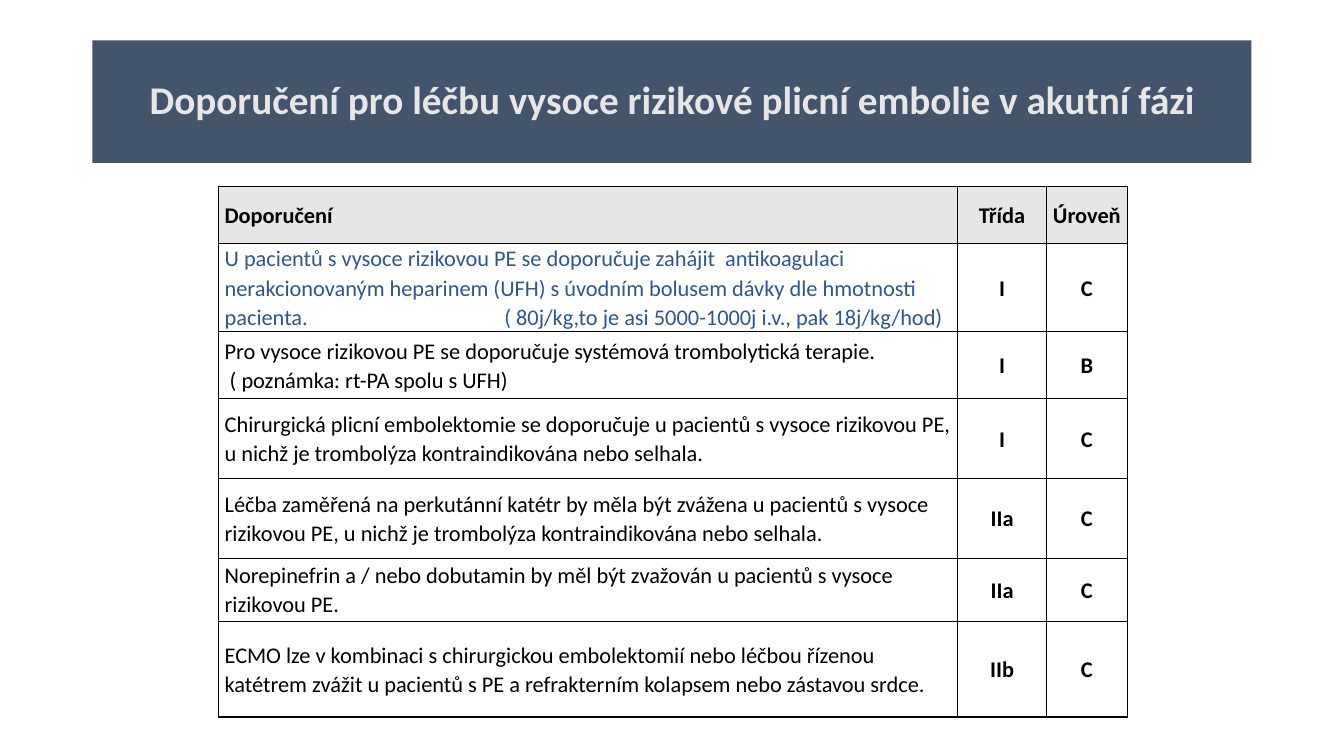
from typing import NamedTuple

from lxml.etree import SubElement
from pptx import Presentation
from pptx.dml.color import RGBColor
from pptx.enum.shapes import MSO_SHAPE as Shape
from pptx.enum.text import MSO_ANCHOR as Anchor, PP_ALIGN as Align
from pptx.oxml import parse_xml
from pptx.oxml.ns import nsdecls, qn
from pptx.util import Inches, Pt

# The slide is a grid of 160 columns by 90 rows, 12 to the inch.
UNIT = Inches(1) // 12
FONT = "Calibri"
BLACK, BLUE, SLATE, PALE = "000000", "2F5597", "44546A", "E7E6E6"
COLS = (88, 10.6, 9.6)
PAD = 0.75


class Advice(NamedTuple):
    text: str
    grade: str
    level: str
    height: float
    color: str = BLACK
    tab: float = 0


HEAD = Advice("Doporučení", "Třída", "Úroveň", 6.8)
ITEMS = (
    Advice("U pacientů s vysoce rizikovou PE se doporučuje zahájit  antikoagulaci  "
           "nerakcionovaným heparinem (UFH) s úvodním bolusem dávky dle hmotnosti "
           "pacienta.\t( 80j/kg,to je asi 5000-1000j i.v., pak 18j/kg/hod)",
           "I", "C", 9.5, BLUE, 33.3),
    Advice("Pro vysoce rizikovou PE se doporučuje systémová trombolytická terapie.\n"
           " ( poznámka: rt-PA spolu s UFH)", "I", "B", 8),
    Advice("Chirurgická plicní embolektomie se doporučuje u pacientů s vysoce "
           "rizikovou PE, u nichž je trombolýza kontraindikována nebo selhala.",
           "I", "C", 9.5),
    Advice("Léčba zaměřená na perkutánní katétr by měla být zvážena u pacientů s "
           "vysoce rizikovou PE, u nichž je trombolýza kontraindikována nebo selhala.",
           "IIa", "C", 9.5),
    Advice("Norepinefrin a / nebo dobutamin by měl být zvažován u pacientů s vysoce "
           "rizikovou PE.", "IIa", "C", 7.5),
    Advice("ECMO lze v kombinaci s chirurgickou embolektomií nebo léčbou řízenou "
           "katétrem zvážit u pacientů s PE a refrakterním kolapsem nebo zástavou "
           "srdce.", "IIb", "C", 11.4),
)


def grid(count: float) -> int:
    """Turn grid steps into a length."""
    return round(count * UNIT)


def paint(hue: str) -> RGBColor:
    return RGBColor.from_string(hue)


def write(frame, text: str, *, size: float = 16, color: str = BLACK,
          bold: bool = False, align=Align.LEFT, space: float = 1.07,
          tab: float = 0) -> None:
    """Fill a text frame, one paragraph to each line of text."""
    for i, line in enumerate(text.split("\n")):
        para = frame.add_paragraph() if i else frame.paragraphs[0]
        para.alignment, para.line_spacing = align, space
        run = para.add_run()
        run.text = line
        font = run.font
        font.name, font.size, font.bold = FONT, Pt(size), bold
        font.color.rgb = paint(color)
        if tab:
            stops = SubElement(para._p.get_or_add_pPr(), qn("a:tabLst"))
            SubElement(stops, qn("a:tab"), pos=str(grid(tab)), algn="l")


def edge(cell, color: str = BLACK, width: float = 1) -> None:
    """Draw a line on all four sides of a cell."""
    props = cell._tc.get_or_add_tcPr()
    for i, side in enumerate("LRTB"):
        props.insert(i, parse_xml(
            f'<a:ln{side} {nsdecls("a")} w="{Pt(width)}"><a:solidFill>'
            f'<a:srgbClr val="{color}"/></a:solidFill></a:ln{side}>'))


def add_title(slide, text: str) -> None:
    bar = slide.shapes.add_shape(
        Shape.RECTANGLE, grid(11), grid(4.8), grid(138), grid(14.6))
    bar.shadow.inherit = False
    bar.fill.solid()
    bar.fill.fore_color.rgb = paint(SLATE)
    bar.line.fill.background()
    bar.text_frame.word_wrap = True
    bar.text_frame.vertical_anchor = Anchor.MIDDLE
    write(bar.text_frame, text, size=28, color=PALE, bold=True,
          align=Align.CENTER, space=0.9)


def add_advice(slide, rows: tuple[Advice, ...]) -> None:
    table = slide.shapes.add_table(
        len(rows), len(COLS), grid(26), grid(22.2), grid(sum(COLS)),
        grid(sum(row.height for row in rows))).table
    table.first_row = table.horz_banding = False
    for col, width in zip(table.columns, COLS):
        col.width = grid(width)
    for r, row in enumerate(rows):
        table.rows[r].height = grid(row.height)
        for c, text in enumerate((row.text, row.grade, row.level)):
            cell = table.cell(r, c)
            cell.margin_left = cell.margin_right = grid(PAD)
            cell.margin_top = cell.margin_bottom = 0
            cell.vertical_anchor = Anchor.MIDDLE
            if r == 0:
                cell.fill.solid()
                cell.fill.fore_color.rgb = paint(PALE)
            else:
                cell.fill.background()
            edge(cell)
            write(cell.text_frame, text, bold=r == 0 or c > 0,
                  color=BLACK if c else row.color,
                  align=Align.CENTER if c else Align.LEFT,
                  tab=0 if c else row.tab)


def main() -> None:
    deck = Presentation()
    deck.slide_width, deck.slide_height = grid(160), grid(90)
    slide = deck.slides.add_slide(deck.slide_layouts[6])
    add_title(slide, "Doporučení pro léčbu vysoce rizikové plicní embolie v akutní fázi")
    add_advice(slide, (HEAD, *ITEMS))
    deck.save("out.pptx")


if __name__ == "__main__":
    main()
